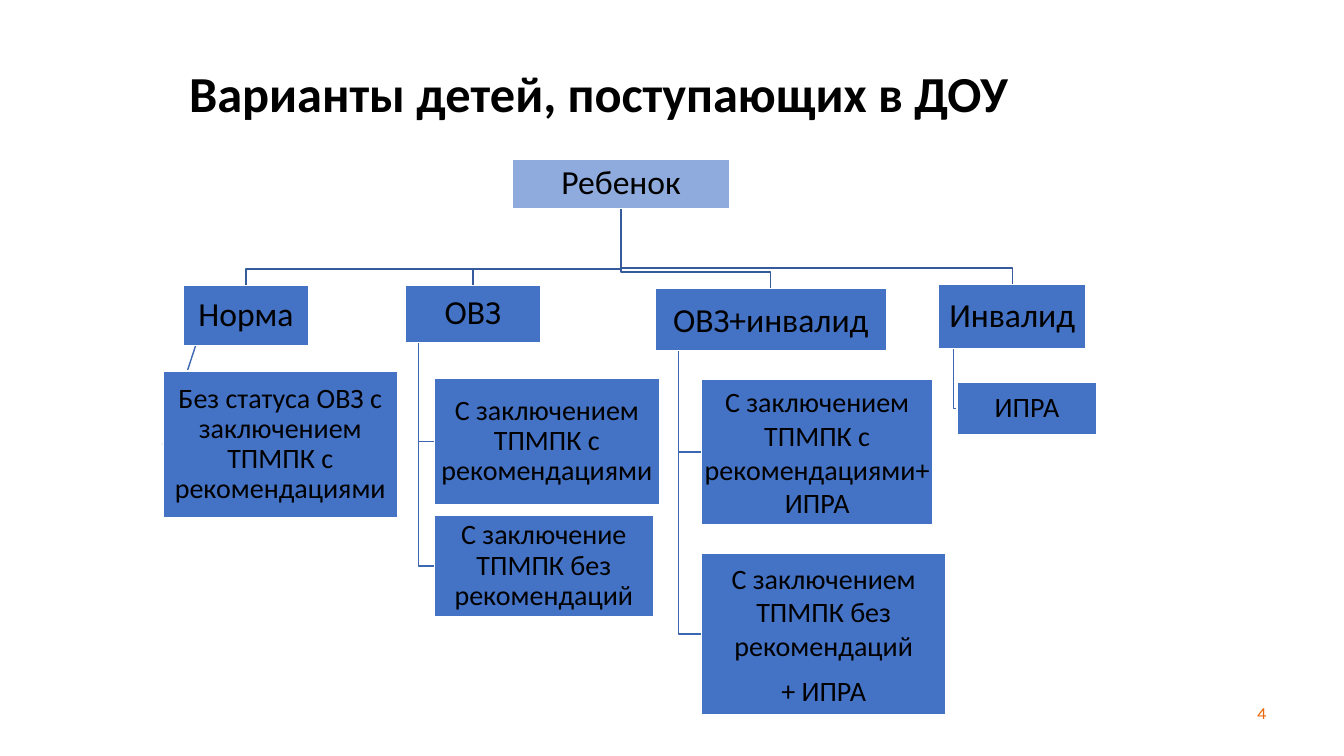
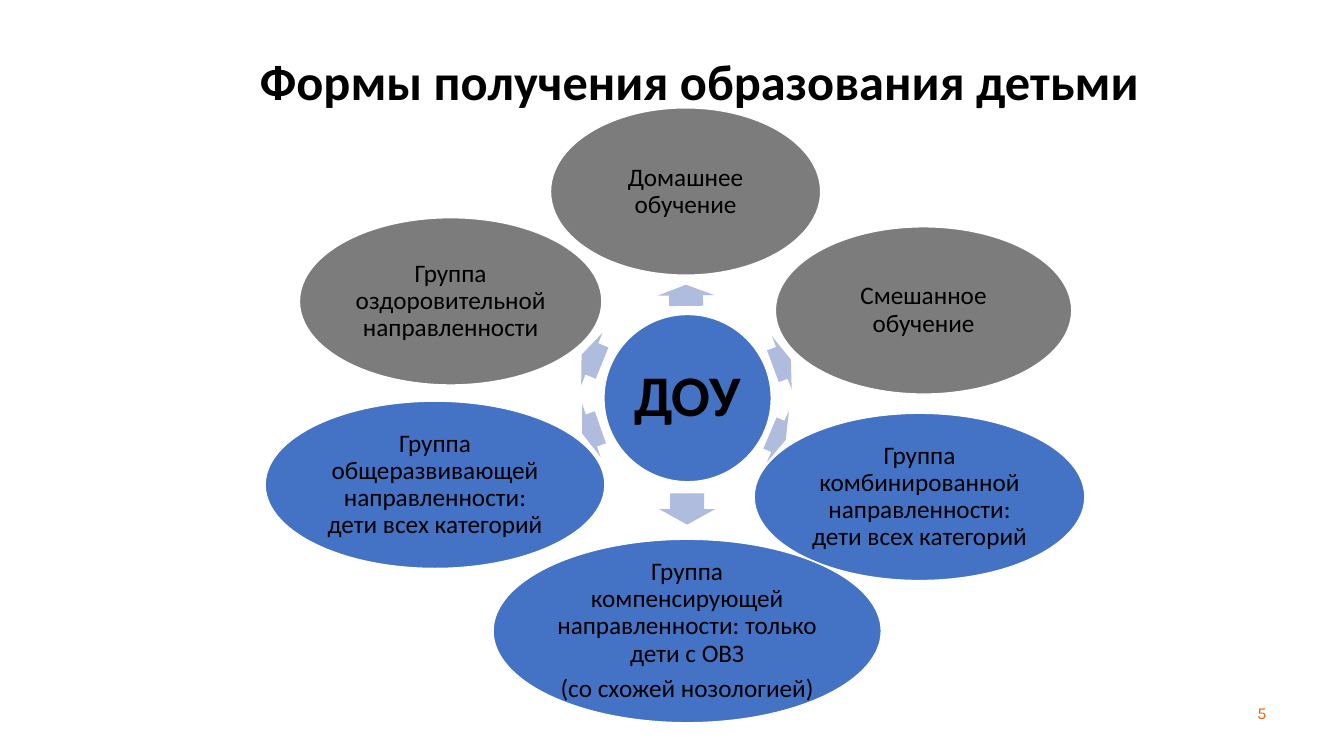
from dataclasses import dataclass

from lxml.etree import SubElement
from pptx import Presentation
from pptx.dml.color import RGBColor
from pptx.enum.shapes import MSO_CONNECTOR as Connector
from pptx.enum.shapes import MSO_SHAPE as Preset
from pptx.enum.text import MSO_ANCHOR as Anchor
from pptx.enum.text import MSO_AUTO_SIZE as AutoSize
from pptx.enum.text import PP_ALIGN as Align
from pptx.oxml.ns import qn
from pptx.util import Inches, Pt

COLORS = {
    "text": "000000",
    "white": "FFFFFF",
    "blue": "4472C4",
    "light_blue": "8FAADC",
    "gray": "7C7C7C",
    "arrow": "B0BCDE",
    "bus": "365B9D",
    "spine": "3E67B2",
    "number": "EC670B",
}
FONT = "Calibri"
NUMBER_FONT = "Karla"
TITLE_SIZE = (10.24, 1.48)
TITLE_INDENT = 0.28
NUMBER_BOX = (12.37, 6.92, 0.44, 0.36)
TITLE_ONLY = 5

Box = tuple[float, float, float, float]
Point = tuple[float, float]


@dataclass(frozen=True)
class Node:
    text: str
    box: Box
    size: int = 20
    inset: float = 0.01
    spacing: float = 0.9
    fill: str = "blue"
    bold: bool = False
    gap: int = 0


@dataclass(frozen=True)
class Branch:
    head: Node
    bus_y: float
    spine_x: float
    leaves: tuple[Node, ...]
    slanted: bool = False


@dataclass(frozen=True)
class Petal:
    node: Node
    arrow: Box
    angle: float


def rgb(name: str) -> RGBColor:
    return RGBColor.from_string(COLORS[name])


def inches(values) -> list:
    return [Inches(value) for value in values]


def write_text(frame, text, *, size, font=FONT, color="text", bold=False,
               align=Align.CENTER, anchor=Anchor.MIDDLE, spacing=0.9,
               gap=0, insets=(0.1, 0.1, 0.1, 0.1), indent=0):
    frame.word_wrap = True
    frame.auto_size = AutoSize.NONE
    frame.vertical_anchor = anchor
    (frame.margin_left, frame.margin_top,
     frame.margin_right, frame.margin_bottom) = inches(insets)
    for index, line in enumerate(text.split("\n")):
        paragraph = frame.add_paragraph() if index else frame.paragraphs[0]
        properties = paragraph._p.get_or_add_pPr()
        properties.set("marL", str(Inches(indent)))
        properties.set("indent", "0")
        paragraph.alignment = align
        paragraph.line_spacing = spacing
        paragraph.space_before = Pt(gap if index else 0)
        paragraph.space_after = Pt(0)
        run = paragraph.add_run()
        run.text = line
        run.font.name = font
        run.font.size = Pt(size)
        run.font.bold = bold
        run.font.color.rgb = rgb(color)


def add_page(deck, title: str, left: float, top: float, number: int):
    slide = deck.slides.add_slide(deck.slide_layouts[TITLE_ONLY])
    heading = slide.shapes.title
    heading.left, heading.top, heading.width, heading.height = inches((left, top, *TITLE_SIZE))
    write_text(heading.text_frame, title, size=36, bold=True, indent=TITLE_INDENT)
    page_number = slide.shapes.add_textbox(*inches(NUMBER_BOX))
    write_text(page_number.text_frame, str(number), size=12, font=NUMBER_FONT,
               color="number", align=Align.LEFT, anchor=Anchor.TOP, spacing=1.0,
               insets=(0.1, 0.05, 0, 0.05))
    return slide


def add_filled(slide, preset, box: Box, fill: str):
    shape = slide.shapes.add_shape(preset, *inches(box))
    shape.shadow.inherit = False
    shape.fill.solid()
    shape.fill.fore_color.rgb = rgb(fill)
    return shape


def set_line(shape, color: str) -> None:
    shape.line.color.rgb = rgb(color)
    shape.line.width = Pt(1)


def draw_node(slide, node: Node, preset=Preset.RECTANGLE) -> None:
    shape = add_filled(slide, preset, node.box, node.fill)
    set_line(shape, "white")
    write_text(shape.text_frame, node.text, size=node.size, bold=node.bold,
               spacing=node.spacing, gap=node.gap, insets=(node.inset,) * 4)


def draw_straight(slide, start: Point, end: Point, color: str) -> None:
    link = slide.shapes.add_connector(Connector.STRAIGHT, *inches((*start, *end)))
    set_line(link, color)
    SubElement(link._element.spPr, qn("a:effectLst"))


def draw_bent(slide, points: list[Point], color: str) -> None:
    start, *corners = [tuple(inches(point)) for point in points]
    outline = slide.shapes.build_freeform(*start)
    outline.add_line_segments(corners, close=False)
    route = outline.convert_to_shape()
    route.shadow.inherit = False
    route.fill.background()
    set_line(route, color)


def draw_links(slide, branch: Branch, trunk: Point) -> None:
    left, top, width, height = branch.head.box
    center = left + width / 2
    draw_bent(slide, [trunk, (trunk[0], branch.bus_y), (center, branch.bus_y),
                      (center, top)], "bus")
    spine_top = (branch.spine_x, top + height)
    for leaf in branch.leaves:
        leaf_left, leaf_top, _, leaf_height = leaf.box
        leaf_side = (leaf_left, leaf_top + leaf_height / 2)
        if branch.slanted:
            draw_straight(slide, spine_top, leaf_side, "spine")
        else:
            draw_bent(slide, [spine_top, (branch.spine_x, leaf_side[1]), leaf_side], "spine")


def head_node(text: str, box: Box, **options) -> Node:
    return Node(text, box, size=24, inset=0.02, **options)


def petal_node(text: str, box: Box, **options) -> Node:
    return Node(text, box, size=18, inset=0.03, **options)


CHILD = head_node("Ребенок", (5.08, 1.58, 2.16, 0.49), fill="light_blue")

BRANCHES = (
    Branch(head_node("Инвалид", (9.31, 2.82, 1.46, 0.64)), 2.66, 9.46, (
        Node("ИПРА", (9.49, 3.79, 1.39, 0.52)),
    )),
    Branch(head_node("ОВЗ+инвалид", (6.5, 2.86, 2.29, 0.62), spacing=1.0), 2.7, 6.73, (
        Node("С заключением ТПМПК с рекомендациями+ ИПРА",
             (6.96, 3.76, 2.29, 1.45), spacing=1.0),
        Node("С заключением ТПМПК без рекомендаций\n+ ИПРА",
             (6.96, 5.49, 2.42, 1.6), spacing=1.0, gap=8),
    )),
    Branch(head_node("ОВЗ", (4.02, 2.83, 1.34, 0.57)), 2.67, 4.15, (
        Node("С заключением ТПМПК с рекомендациями", (4.31, 3.75, 2.23, 1.26)),
        Node("С заключение ТПМПК без рекомендаций", (4.31, 5.11, 2.17, 1.01)),
    )),
    Branch(head_node("Норма", (1.82, 2.83, 1.24, 0.6)), 2.67, 1.94, (
        Node("Без статуса ОВЗ с заключением ТПМПК с рекомендациями",
             (1.62, 3.68, 2.32, 1.46)),
    ), slanted=True),
)

HUB = Node("ДОУ", (5.99, 3.12, 1.66, 1.66), size=41, inset=0.03, bold=True)

PETALS = (
    Petal(petal_node("Домашнее обучение", (5.46, 1.07, 2.68, 1.66), fill="gray"),
          (6.7, 2.65, 0.21, 0.56), 269.4),
    Petal(petal_node("Смешанное обучение", (7.69, 2.25, 2.94, 1.66), fill="gray"),
          (7.66, 3.32, 0.19, 0.56), 339.7),
    Petal(petal_node("Группа комбинированной направленности: дети всех категорий",
                     (7.48, 4.1, 3.28, 1.66)),
          (7.63, 4.05, 0.17, 0.56), 23.1),
    Petal(petal_node("Группа компенсирующей направленности: только дети с ОВЗ\n"
                     "(со схожей нозологией)", (4.89, 5.35, 3.85, 1.82), gap=6),
          (6.66, 4.77, 0.31, 0.56), 90),
    Petal(petal_node("Группа общеразвивающей направленности: дети всех категорий",
                     (2.63, 3.98, 3.37, 1.66)),
          (5.77, 3.99, 0.19, 0.56), 160.8),
    Petal(petal_node("Группа оздоровительной направленности",
                     (2.97, 2.16, 3, 1.66), fill="gray"),
          (5.76, 3.28, 0.22, 0.56), 202.2),
)


def build_admission_tree(deck) -> None:
    slide = add_page(deck, "Варианты детей, поступающих в ДОУ", 0.68, 0.21, 4)
    left, top, width, height = CHILD.box
    for branch in BRANCHES:
        draw_links(slide, branch, (left + width / 2, top + height))
    draw_node(slide, CHILD)
    for branch in BRANCHES:
        for node in (branch.head, *branch.leaves):
            draw_node(slide, node)


def build_education_forms(deck) -> None:
    slide = add_page(deck, "Формы получения образования детьми", 1.68, 0.1, 5)
    draw_node(slide, HUB, Preset.OVAL)
    for petal in PETALS:
        arrow = add_filled(slide, Preset.RIGHT_ARROW, petal.arrow, "arrow")
        arrow.line.fill.background()
        arrow.adjustments[0] = 0.6
        arrow.adjustments[1] = 0.5
        arrow.rotation = petal.angle
        draw_node(slide, petal.node, Preset.OVAL)


def main() -> None:
    deck = Presentation()
    deck.slide_width, deck.slide_height = inches((13.33, 7.5))
    build_admission_tree(deck)
    build_education_forms(deck)
    deck.save("out.pptx")


if __name__ == "__main__":
    main()
